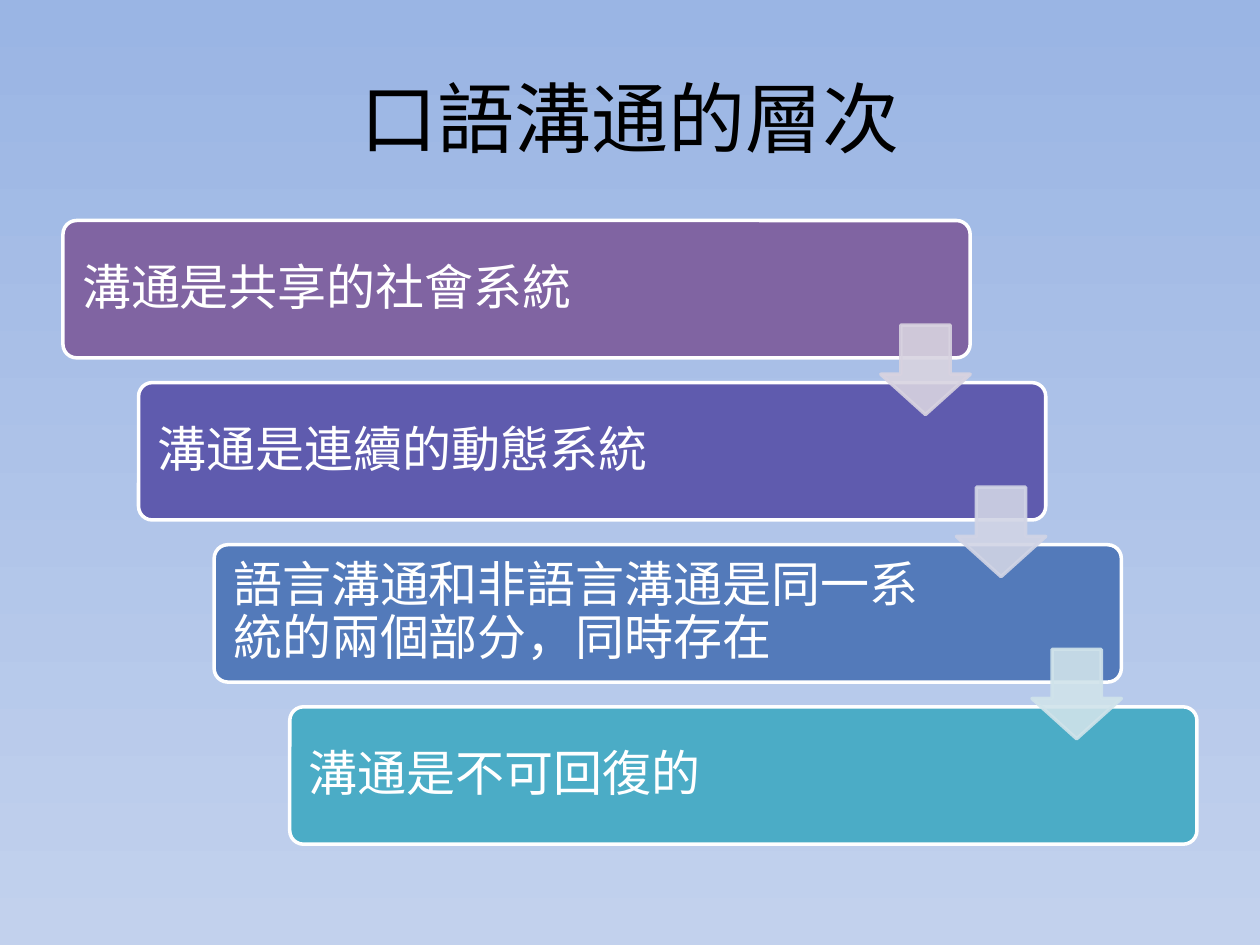
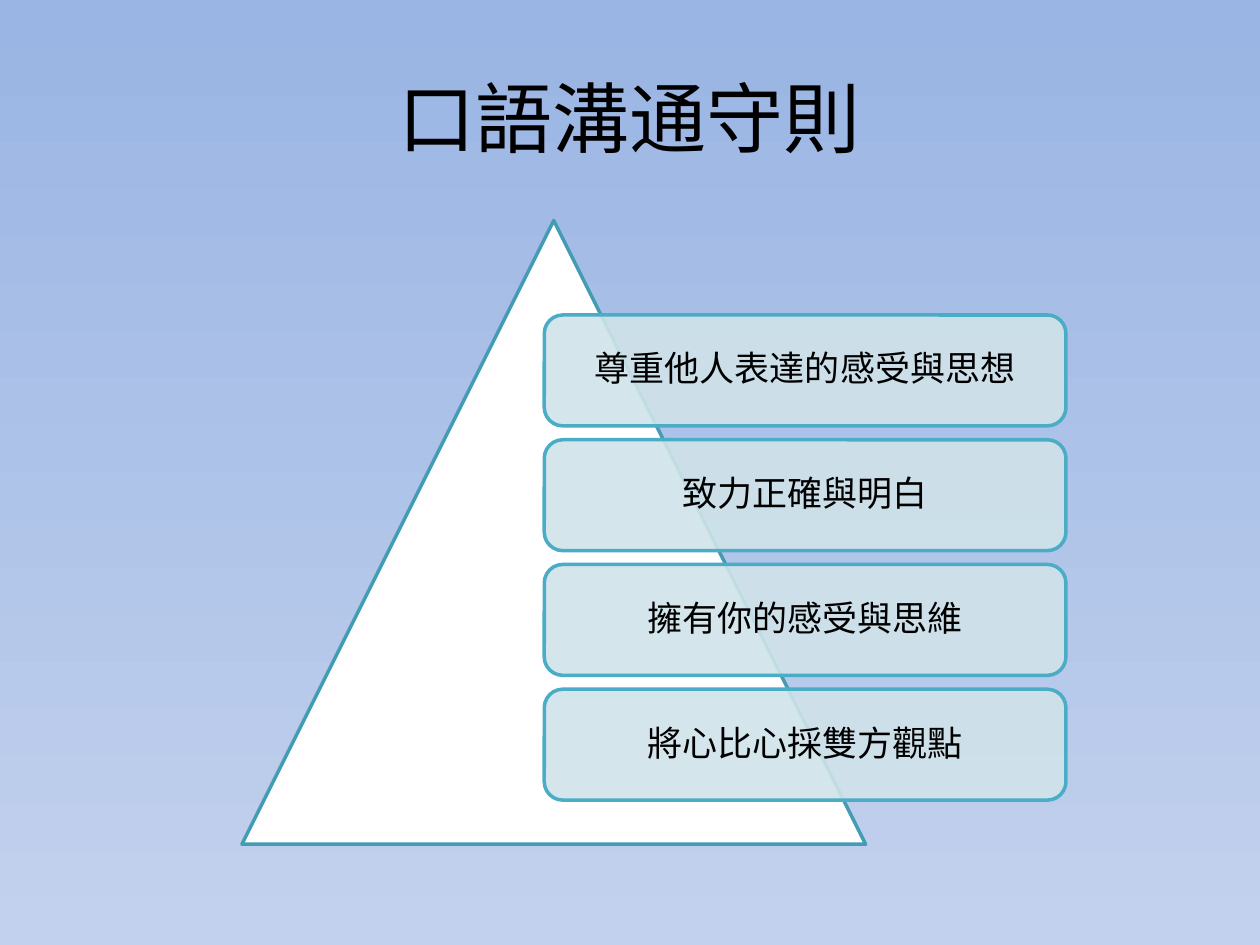
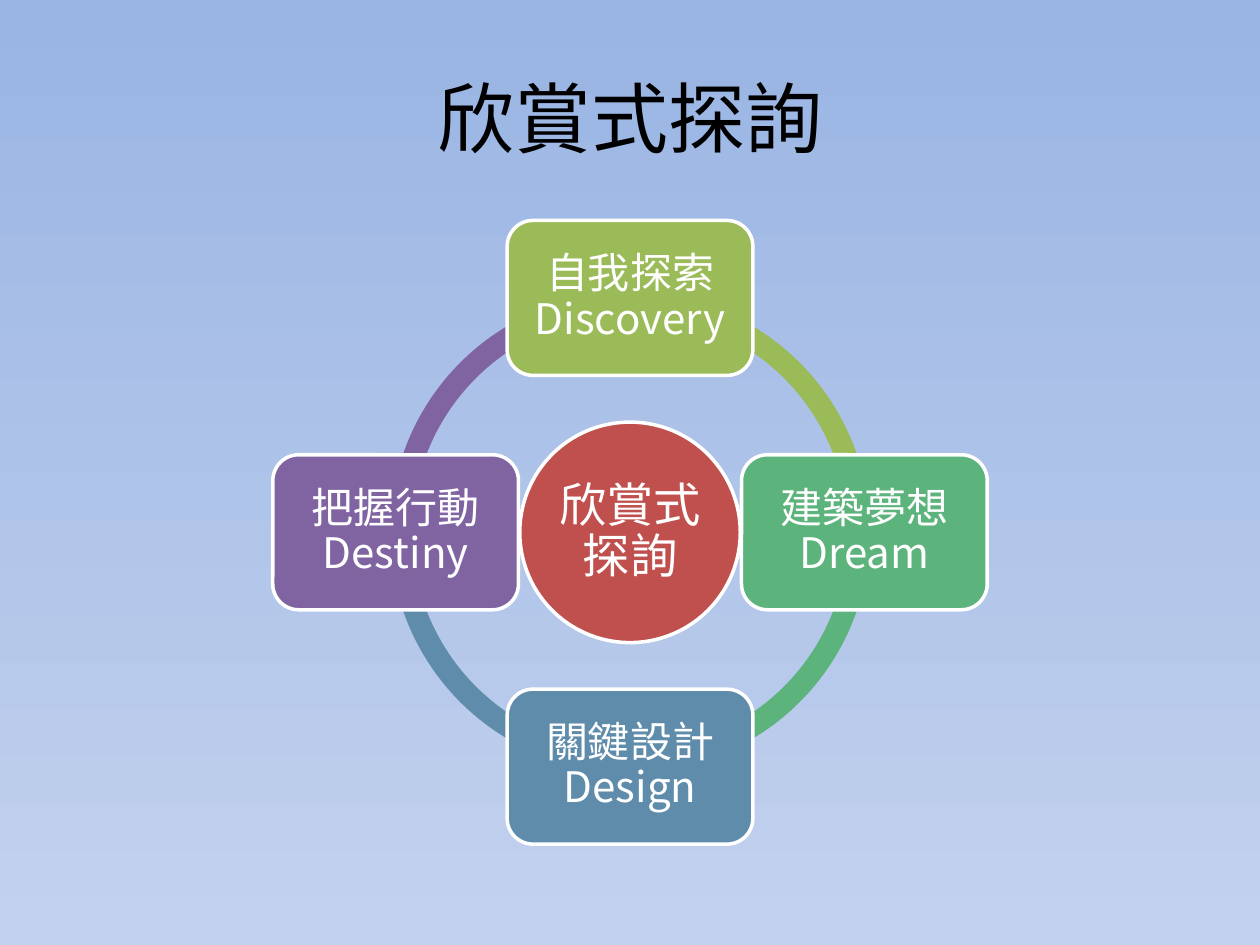
"""Build three slides on spoken communication and appreciative inquiry."""
from math import cos, radians, sin

from lxml.etree import SubElement
from pptx import Presentation
from pptx.dml.color import RGBColor
from pptx.enum.shapes import MSO_SHAPE
from pptx.enum.text import MSO_ANCHOR, PP_ALIGN
from pptx.oxml.ns import qn
from pptx.util import Inches, Pt

FONT = "Noto Sans CJK SC"
COLORS = {
    "sky_top": "9AB5E4", "sky_bottom": "C2D1ED", "black": "000000", "white": "FFFFFF",
    "purple": "8064A2", "indigo": "5F5BAE", "blue": "537ABA", "aqua": "4BACC6",
    "pale_purple": "D8D3E0", "pale_indigo": "D1D4E5", "pale_aqua": "D0E3EA",
    "dark_aqua": "449CB4", "green": "9BBB59", "emerald": "5CB37C",
    "steel": "608CAB", "red": "C0504D",
}

LEVELS_TITLE = "口語溝通的層次"
LEVELS = [
    ("溝通是共享的社會系統", "purple"),
    ("溝通是連續的動態系統", "indigo"),
    ("語言溝通和非語言溝通是同一系統的兩個部分，同時存在", "blue"),
    ("溝通是不可回復的", "aqua"),
]
LEVEL_ARROWS = ["pale_purple", "pale_indigo", "pale_aqua"]

RULES_TITLE = "口語溝通守則"
RULES = ["尊重他人表達的感受與思想", "致力正確與明白", "擁有你的感受與思維", "將心比心採雙方觀點"]

INQUIRY_TITLE = "欣賞式探詢"
INQUIRY_STAGES = [
    ("自我探索\nDiscovery", "green"),
    ("建築夢想\nDream", "emerald"),
    ("關鍵設計\nDesign", "steel"),
    ("把握行動\nDestiny", "purple"),
]

TOP, BOTTOM = 1.75, 6.7


def rgb(name):
    return RGBColor.from_string(COLORS[name])


def set_color(fill, name, opacity):
    fill.solid()
    fill.fore_color.rgb = rgb(name)
    if opacity < 100:
        color = fill._xPr.find(".//" + qn("a:srgbClr"))
        SubElement(color, qn("a:alpha"), val=str(opacity * 1000))


def write(s, text, size, color, margins, align=PP_ALIGN.CENTER, spacing=None):
    tf = s.text_frame
    tf.word_wrap = True
    tf.vertical_anchor = MSO_ANCHOR.MIDDLE
    tf.margin_left, tf.margin_top, tf.margin_right, tf.margin_bottom = map(Inches, margins)
    p = tf.paragraphs[0]
    p.text = text
    p.alignment = align
    p.line_spacing = spacing
    for r in p.runs:
        r.font.size = Pt(size)
        r.font.name = FONT
        r.font.color.rgb = rgb(color)
        SubElement(r.font._rPr, qn("a:ea"), typeface=FONT)


def add_shape(slide, kind, box, fill, line=None, adjust=(), opacity=100, line_opacity=100):
    s = slide.shapes.add_shape(kind, *map(Inches, box))
    s.shadow.inherit = False
    for i, value in enumerate(adjust):
        s.adjustments[i] = value
    set_color(s.fill, fill, opacity)
    if line:
        s.line.width = Pt(2)
        set_color(s.line.fill, line, line_opacity)
    else:
        s.line.fill.background()
    return s


def add_slide(prs, title):
    slide = prs.slides.add_slide(prs.slide_layouts[6])
    fill = slide.background.fill
    fill.gradient()
    fill.gradient_angle = 270
    for stop, name in zip(fill.gradient_stops, ("sky_top", "sky_bottom")):
        stop.color.rgb = rgb(name)
    sp = slide.shapes.add_textbox(*map(Inches, (0.5, 0.3, 9, 1.25)))
    write(sp, title, 44, "black", (0.1, 0.05, 0.1, 0.05))
    return slide


def build_levels(prs):
    slide = add_slide(prs, LEVELS_TITLE)
    left, width, height, shift = 0.5, 7.2, 1.09, 0.6
    pitch = (BOTTOM - TOP - height) / (len(LEVELS) - 1)
    for i, (text, color) in enumerate(LEVELS):
        s = add_shape(slide, MSO_SHAPE.ROUNDED_RECTANGLE,
                      (left + i * shift, TOP + i * pitch, width, height),
                      color, "white", [0.1])
        write(s, text, 28, "white", (0.12, 0.12, 1.43, 0.12), PP_ALIGN.LEFT, 0.9)
    size = 0.71
    for i, color in enumerate(LEVEL_ARROWS):
        add_shape(slide, MSO_SHAPE.DOWN_ARROW,
                  (left + width - size + i * shift, 2.58 + i * pitch, size, size),
                  color, color, [0.55, 0.45], 90, 90)


def build_rules(prs):
    slide = add_slide(prs, RULES_TITLE)
    side = BOTTOM - TOP
    add_shape(slide, MSO_SHAPE.ISOSCELES_TRIANGLE, (1.92, TOP, side, side), "white", "dark_aqua")
    for i, text in enumerate(RULES):
        s = add_shape(slide, MSO_SHAPE.ROUNDED_RECTANGLE, (4.32, 2.5 + i * 0.99, 4.14, 0.88),
                      "pale_aqua", "aqua", opacity=90)
        write(s, text, 20, "black", [0.08] * 4, spacing=0.9)


def build_inquiry(prs):
    slide = add_slide(prs, INQUIRY_TITLE)
    cx, cy, radius = 5, (TOP + BOTTOM) / 2, 1.86

    def centered(x, y, w, h):
        return x - w / 2, y - h / 2, w, h

    for i, (_, color) in reversed(list(enumerate(INQUIRY_STAGES))):
        start, end = ((270 + 90 * k) % 360 * 0.6 for k in (i, i + 1))
        add_shape(slide, MSO_SHAPE.BLOCK_ARC, centered(cx, cy, 3.81, 3.81), color,
                  adjust=[start, end, 0.046])
    hub = add_shape(slide, MSO_SHAPE.OVAL, centered(cx, cy, 1.75, 1.75), "red", "white")
    write(hub, INQUIRY_TITLE, 27, "white", [0.04] * 4, spacing=0.9)
    for i, (text, color) in enumerate(INQUIRY_STAGES):
        angle = radians(90 * i - 90)
        x, y = cx + radius * cos(angle), cy + radius * sin(angle)
        s = add_shape(slide, MSO_SHAPE.ROUNDED_RECTANGLE, centered(x, y, 1.95, 1.23),
                      color, "white")
        write(s, text, 24, "white", [0.03] * 4, spacing=0.9)


def main():
    prs = Presentation()
    prs.slide_width, prs.slide_height = Inches(10), Inches(7.5)
    build_levels(prs)
    build_rules(prs)
    build_inquiry(prs)
    prs.save("out.pptx")


if __name__ == "__main__":
    main()
